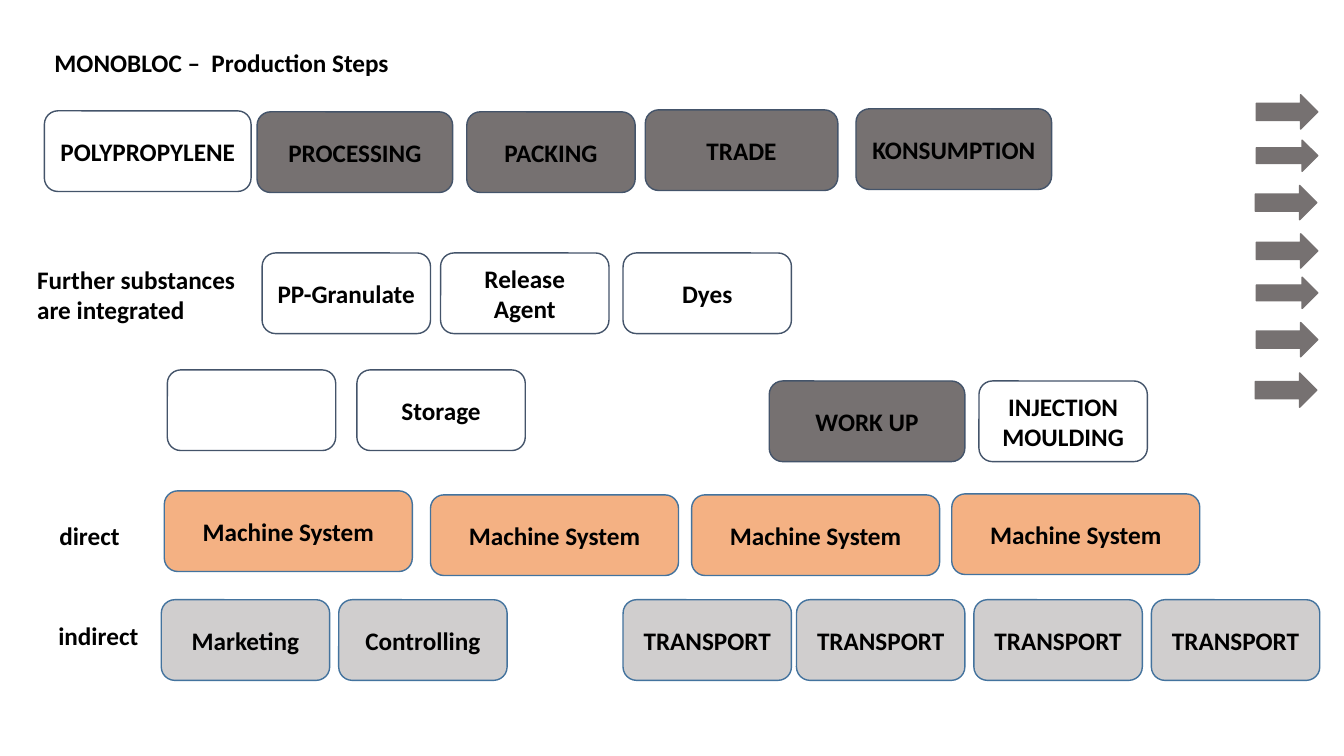
from pptx import Presentation
from pptx.dml.color import RGBColor
from pptx.enum.shapes import MSO_SHAPE as Shape
from pptx.enum.text import MSO_ANCHOR as Anchor, MSO_AUTO_SIZE as AutoSize, PP_ALIGN as Align
from pptx.util import Pt

PX = 9144  # EMU per px, 100 px to the inch
WHITE, DARK, LIGHT, ORANGE = "FFFFFF", "767171", "D0CECE", "F4B183"
NAVY, BLUE = "44546A", "43739E"
BOX_HEIGHT = 80


def write(shape, text, align=Align.LEFT, anchor=Anchor.TOP, size=18, color="000000"):
    frame = shape.text_frame
    frame.word_wrap = True
    frame.auto_size = AutoSize.NONE
    frame.vertical_anchor = anchor
    frame.text = text
    for paragraph in frame.paragraphs:
        paragraph.alignment = align
        paragraph.line_spacing = 1.0
        font = paragraph.font
        font.name, font.size, font.bold = "Calibri", Pt(size), True
        font.color.rgb = RGBColor.from_string(color)


def add_block(kind, left, top, width, height, fill, line):
    shape = slide.shapes.add_shape(kind, left * PX, top * PX, width * PX, height * PX)
    shape.shadow.inherit = False
    shape.fill.solid()
    shape.fill.fore_color.rgb = RGBColor.from_string(fill)
    shape.line.color.rgb = RGBColor.from_string(line)
    shape.line.width = Pt(1)
    return shape


presentation = Presentation()
presentation.slide_width, presentation.slide_height = 1333 * PX, 750 * PX
slide = presentation.slides.add_slide(presentation.slide_layouts[5])

title = slide.shapes.title
title.left, title.top, title.width, title.height = 44 * PX, 42 * PX, 886 * PX, 40 * PX
write(title, "MONOBLOC –  Production Steps")

row_labels = [
    ("Further substances\nare integrated", 27, 257, 233, 71),
    ("direct", 49, 511, 100, 40),
    ("indirect", 48, 610, 122, 40),
]
for text, left, top, width, height in row_labels:
    label = slide.shapes.add_textbox(left * PX, top * PX, width * PX, height * PX)
    write(label, text)

# Rows of boxes: fill, line, then text, left, top and width of each box
box_rows = [
    (WHITE, NAVY, [("POLYPROPYLENE", 44, 110, 205)]),
    (DARK, NAVY, [("PROCESSING", 255, 111, 194), ("PACKING", 463, 111, 167),
                  ("TRADE", 640, 109, 191), ("KONSUMPTION", 849, 108, 194)]),
    (WHITE, NAVY, [("PP-Granulate", 260, 251, 167), ("Release Agent", 437, 251, 167),
                   ("Dyes", 618, 251, 167)]),
    (WHITE, NAVY, [("", 166, 367, 167), ("Storage", 354, 367, 167)]),
    (DARK, NAVY, [("WORK UP", 763, 378, 194)]),
    (WHITE, NAVY, [("INJECTION MOULDING", 971, 378, 167)]),
    (ORANGE, BLUE, [("Machine System", left, top, 246)
                    for left, top in [(163, 487), (427, 491), (686, 491), (944, 490)]]),
    (LIGHT, BLUE, [("Marketing", 160, 595, 167), ("Controlling", 336, 595, 167)]),
    (LIGHT, BLUE, [("TRANSPORT", left, 595, 167) for left in (618, 790, 966, 1142)]),
]
for fill, line, boxes in box_rows:
    for text, left, top, width in boxes:
        box = add_block(Shape.ROUNDED_RECTANGLE, left, top, width, BOX_HEIGHT, fill, line)
        if text:
            write(box, text, align=Align.CENTER, anchor=Anchor.MIDDLE)

arrows = [(1246, 94, 34), (1246, 139, 31), (1245, 184, 34), (1246, 232, 34),
          (1246, 275, 31), (1246, 320, 34), (1245, 370, 34)]
for left, top, height in arrows:
    add_block(Shape.RIGHT_ARROW, left, top, 61, height, DARK, DARK)

presentation.save("out.pptx")
